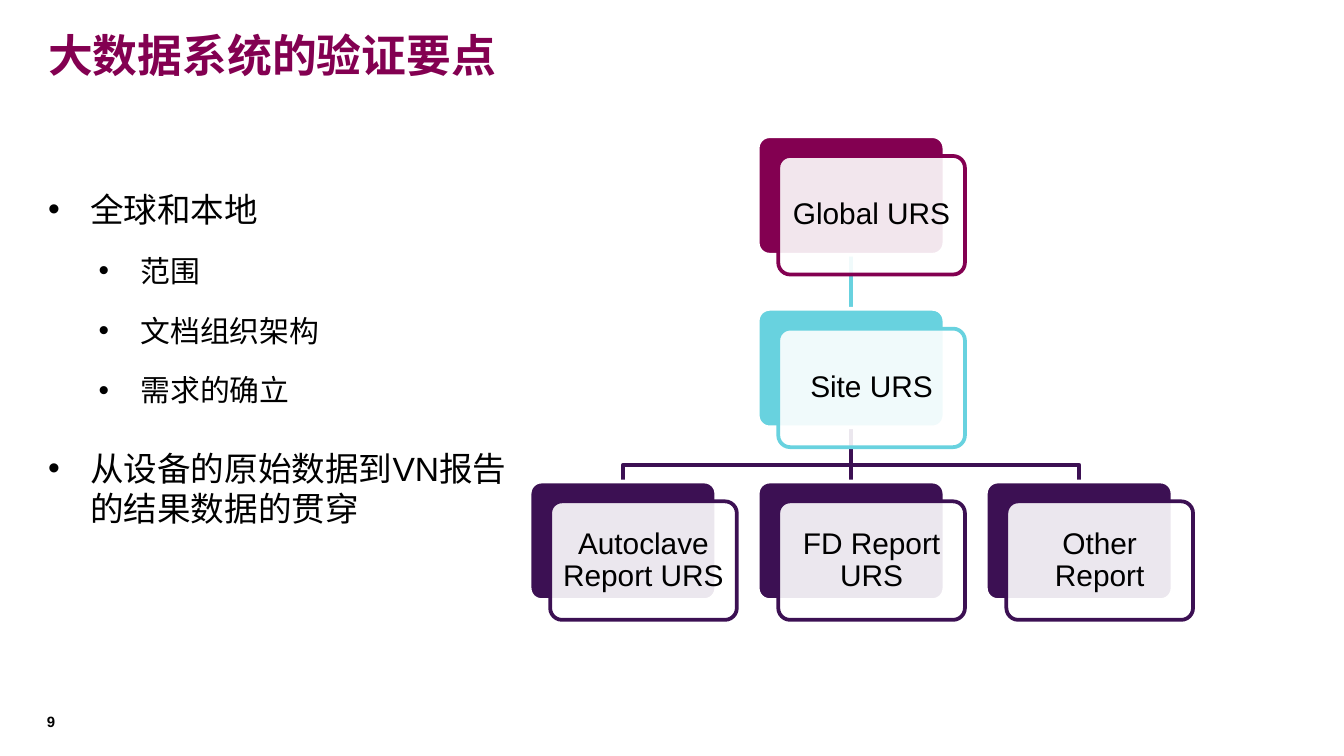
from lxml.etree import SubElement
from pptx import Presentation
from pptx.dml.color import RGBColor
from pptx.enum.lang import MSO_LANGUAGE_ID
from pptx.enum.shapes import MSO_CONNECTOR, MSO_SHAPE
from pptx.enum.text import MSO_ANCHOR, PP_ALIGN
from pptx.oxml.ns import qn
from pptx.util import Pt

WINE = RGBColor(0x83, 0x00, 0x51)
TEAL = RGBColor(0x68, 0xD2, 0xDF)
PLUM = RGBColor(0x3C, 0x10, 0x53)
BLACK = RGBColor(0, 0, 0)
WHITE = RGBColor(0xFF, 0xFF, 0xFF)
HAN = MSO_LANGUAGE_ID.SIMPLIFIED_CHINESE


def add_run(para, words, size, color=BLACK, bold=False, lang=None):
    run = para.add_run()
    run.text = words
    font = run.font
    font.name = "Arial"
    font.size = Pt(size)
    font.bold = bold
    font.color.rgb = color
    if lang:
        font.language_id = lang


def add_card(left, top, fill, line):
    card = slide.shapes.add_shape(
        MSO_SHAPE.ROUNDED_RECTANGLE, Pt(left), Pt(top), Pt(WIDE), Pt(HIGH))
    card.adjustments[0] = 0.1
    card.shadow.inherit = False
    card.fill.solid()
    card.fill.fore_color.rgb = fill
    card.line.color.rgb = line
    card.line.width = Pt(2)
    return card


deck = Presentation()
deck.slide_width = Pt(720)
deck.slide_height = Pt(405)
slide = deck.slides.add_slide(deck.slide_layouts[6])

title = slide.shapes.add_textbox(Pt(18.7), Pt(11.5), Pt(690), Pt(39.6)).text_frame
title.word_wrap = True
title.vertical_anchor = MSO_ANCHOR.TOP
add_run(title.paragraphs[0], "大数据系统的验证要点", 24, WINE, True, HAN)

body = slide.shapes.add_textbox(Pt(18.7), Pt(97.5), Pt(260.6), Pt(127.4)).text_frame
body.word_wrap = True
points = [
    (0, "全球和本地", 0),
    (1, "范围", 3.2),
    (1, "文档组织架构", 3.2),
    (1, "需求的确立", 3.2),
    (0, "从设备的原始数据到VN报告的结果数据的贯穿", 21.5),
]
for i, (level, words, gap) in enumerate(points):
    para = body.paragraphs[0] if i == 0 else body.add_paragraph()
    para.level = level
    para.space_before = Pt(gap)
    para.line_spacing = 1.5 if level else 1.0
    props = para._p.get_or_add_pPr()
    props.set("marL", str(Pt(22.5 + 27 * level)))
    props.set("indent", str(Pt(-22.5)))
    SubElement(props, qn("a:buFont")).set("typeface", "Arial")
    SubElement(props, qn("a:buChar")).set("char", "•")
    add_run(para, words, 16 if level else 18, lang=HAN)

page = slide.shapes.add_textbox(Pt(25.2), Pt(381.6), Pt(31), Pt(13)).text_frame
page.margin_left = page.margin_right = page.margin_top = page.margin_bottom = 0
add_run(page.paragraphs[0], "9", 8, bold=True)

WIDE, HIGH = 100, 63.5
LEFT, TOP = 283.75, 73
STEP_X, STEP_Y = 122.2, 92.5
SHIFT_X, SHIFT_Y = 11, 10.6

mid = LEFT + STEP_X + WIDE / 2
start = TOP + STEP_Y + HIGH
end = TOP + 2 * STEP_Y
bend = end - 9
for side in (1, -1):
    far = mid + side * STEP_X
    path = slide.shapes.build_freeform(Pt(mid), Pt(start))
    path.add_line_segments(
        [(Pt(mid), Pt(bend)), (Pt(far), Pt(bend)), (Pt(far), Pt(end))], close=False)
    branch = path.convert_to_shape()
    branch.shadow.inherit = False
    branch.fill.background()
    branch.line.color.rgb = PLUM
    branch.line.width = Pt(2)

links = []
for color in (TEAL, PLUM):
    link = slide.shapes.add_connector(MSO_CONNECTOR.STRAIGHT, 0, 0, 0, 0)
    link.line.color.rgb = color
    link.line.width = Pt(2)
    SubElement(link._element.spPr, qn("a:effectLst"))
    links.append(link)

nodes = [
    ("Global URS", 1, 0, WINE),
    ("Site URS", 1, 1, TEAL),
    ("Autoclave Report URS", 0, 2, PLUM),
    ("FD Report URS", 1, 2, PLUM),
    ("Other Report", 2, 2, PLUM),
]
spine = []
for words, col, row, color in nodes:
    left, top = LEFT + col * STEP_X, TOP + row * STEP_Y
    back = add_card(left, top, color, WHITE)
    if col == 1:
        spine.append(back)
    front = add_card(left + SHIFT_X, top + SHIFT_Y, WHITE, color)
    tint = front.fill._xPr.find(qn("a:solidFill"))[0]
    SubElement(tint, qn("a:alpha")).set("val", "90000")
    frame = front.text_frame
    frame.word_wrap = True
    frame.vertical_anchor = MSO_ANCHOR.MIDDLE
    frame.margin_left = frame.margin_right = Pt(4)
    frame.margin_top = frame.margin_bottom = Pt(5)
    para = frame.paragraphs[0]
    para.alignment = PP_ALIGN.CENTER
    para.line_spacing = 0.9
    add_run(para, words, 16)

for link, upper, lower in zip(links, spine, spine[1:]):
    link.begin_connect(upper, 2)
    link.end_connect(lower, 0)

deck.save("out.pptx")
